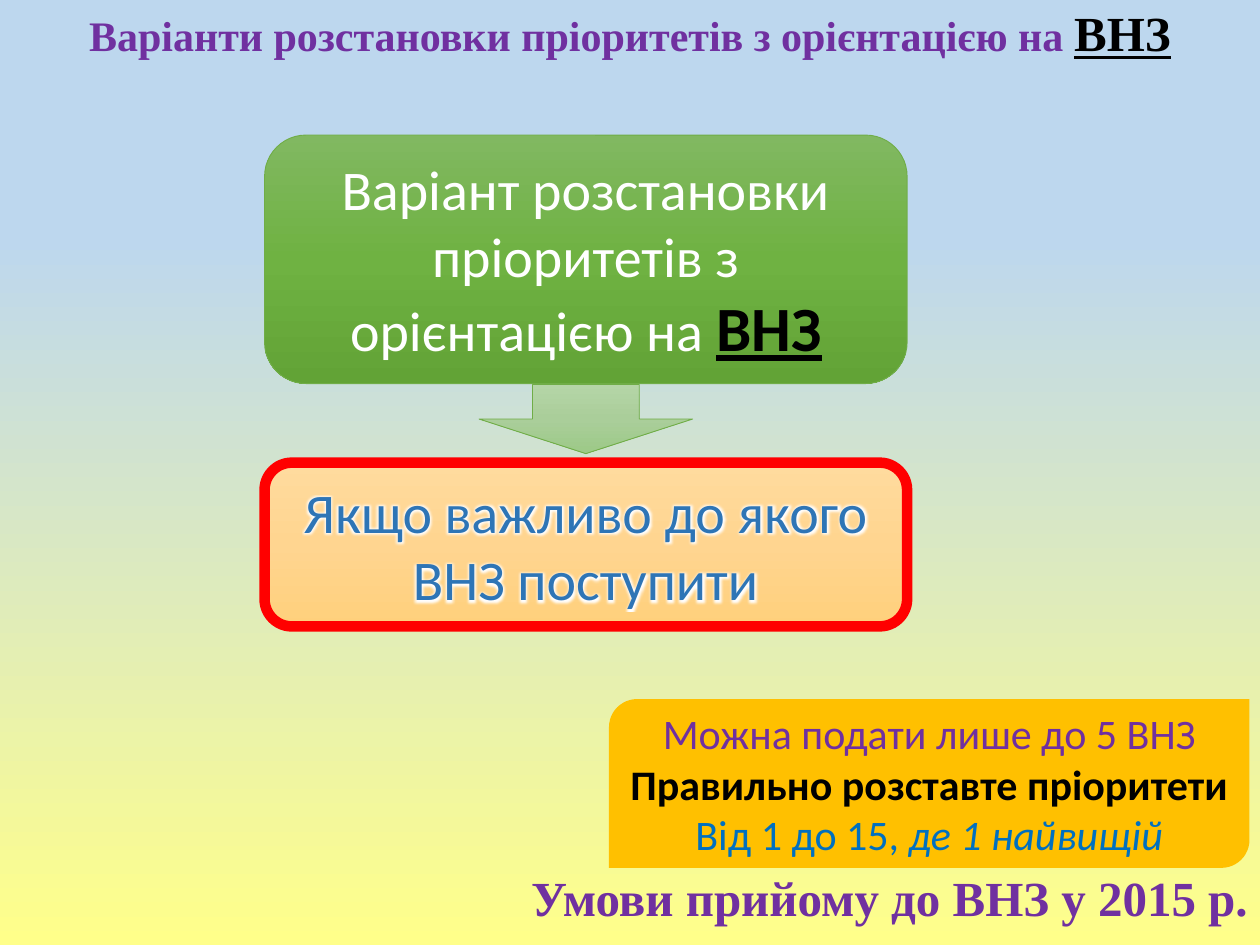
import pptx
import pptx.util
import pptx.dml.color
import pptx.enum.shapes
import pptx.enum.text
import pptx.oxml
import pptx.oxml.ns
import lxml.etree

Pt = pptx.util.Pt
SHAPES = pptx.enum.shapes.MSO_SHAPE
ALIGN = pptx.enum.text.PP_ALIGN
MIDDLE = pptx.enum.text.MSO_ANCHOR.MIDDLE
qn = pptx.oxml.ns.qn

PURPLE, BLACK, LEAF = "7030A0", "000000", "70AD47"


def rgb(value):
    return pptx.dml.color.RGBColor.from_string(value)


def paint_gradient(fill, stops):
    fill.gradient()
    fill.gradient_angle = 270
    stop_list = fill.gradient_stops[0]._gs.getparent()
    stop_list.clear()
    for position, color in stops:
        stop = lxml.etree.SubElement(stop_list, qn("a:gs"), pos=str(position * 1000))
        lxml.etree.SubElement(stop, qn("a:srgbClr"), val=color)


def paint_solid(fill, color):
    fill.solid()
    fill.fore_color.rgb = rgb(color)


def add_glow(run, color, radius):
    effects = lxml.etree.Element(qn("a:effectLst"))
    glow = lxml.etree.SubElement(effects, qn("a:glow"), rad=str(Pt(radius)))
    lxml.etree.SubElement(glow, qn("a:srgbClr"), val=color)
    run.font.fill._xPr.find(qn("a:solidFill")).addnext(effects)


def write(frame, paragraphs, align=ALIGN.CENTER, spacing=None, **base):
    frame.word_wrap = True
    frame.vertical_anchor = MIDDLE
    for index, runs in enumerate(paragraphs):
        paragraph = frame.paragraphs[0] if index == 0 else frame.add_paragraph()
        paragraph.alignment = align
        paragraph.line_spacing = spacing
        for text, changes in runs:
            run = paragraph.add_run()
            run.text = text
            style = {**base, **changes}
            run.font.color.rgb = rgb(style.pop("color"))
            style["size"] = Pt(style["size"])
            for key, value in style.items():
                setattr(run.font, key, value)


def add_block(slide, kind, box, line=None, width=0.5):
    block = slide.shapes.add_shape(kind, *map(Pt, box))
    block.shadow.inherit = False
    if line:
        block.line.color.rgb = rgb(line)
        block.line.width = Pt(width)
    else:
        block.line.fill.background()
    return block


def add_caption(slide, box, runs, align, **base):
    caption = slide.shapes.add_textbox(*map(Pt, box))
    write(caption.text_frame, [runs], align, 0.9,
          name="Times New Roman", bold=True, color=PURPLE, **base)


def add_reminder(slide, box):
    reminder = add_block(slide, SHAPES.ROUND_2_DIAG_RECTANGLE, box)
    paint_solid(reminder.fill, "FFC000")
    reminder.text_frame.margin_top = reminder.text_frame.margin_bottom = 0
    write(reminder.text_frame, [
        [("Можна подати лише до 5 ВНЗ", {"color": PURPLE})],
        [("Правильно розставте пріоритети", {"color": BLACK, "bold": True})],
        [("Від 1 до 15, ", {}), ("де 1 найвищій", {"italic": True})],
    ], name="Calibri", size=24, color="0070C0")


def add_priority_flow(slide, box):
    left, top, width, height = box
    option_height, arrow_top, arrow_height, arrow_width = 142, 142.5, 39.5, 122
    condition_height = 93.6

    option = add_block(slide, SHAPES.ROUNDED_RECTANGLE,
                       (left, top, width, option_height), LEAF)
    paint_gradient(option.fill, [(0, "81B861"), (50, "6FB242"), (100, "62A336")])
    write(option.text_frame, [[
        ("Варіант розстановки пріоритетів з орієнтацією на ", {}),
        ("ВНЗ", {"size": 36, "color": BLACK, "bold": True, "underline": True}),
    ]], name="Calibri", size=32, color="FFFFFF")

    condition = add_block(
        slide, SHAPES.ROUNDED_RECTANGLE,
        (left, top + height - condition_height, width, condition_height), "FF0000", 6)
    paint_gradient(condition.fill, [(0, "FFDB9E"), (50, "FFD590"), (100, "FFD07C")])
    write(condition.text_frame, [[("Якщо важливо до якого ВНЗ поступити", {})]],
          name="Calibri", size=32, color="2E75B6")
    add_glow(condition.text_frame.paragraphs[0].runs[0], "FFFFFF", 3)

    arrow = add_block(
        slide, SHAPES.DOWN_ARROW,
        (left + (width - arrow_width) / 2, top + arrow_top, arrow_width, arrow_height), LEAF)
    paint_gradient(arrow.fill, [(0, "B5D5A7"), (50, "AACE9A"), (100, "9CC987")])


def main():
    deck = pptx.Presentation()
    deck.slide_width, deck.slide_height = Pt(720), Pt(540)
    slide = deck.slides.add_slide(deck.slide_layouts[6])
    paint_gradient(slide.background.fill, [(0, "BDD7EE"), (25, "BDD7EE"), (100, "FFFF8A")])
    add_reminder(slide, (348, 399.5, 366, 96.5))
    add_priority_flow(slide, (151.2, 77.2, 367.2, 280.8))
    add_caption(slide, (72, 489, 648, 51),
                [("Умови прийому до ВНЗ у 2015 р.", {})], ALIGN.RIGHT, size=28)
    add_caption(slide, (0, -0.7, 720, 42.5), [
        ("Варіанти розстановки пріоритетів з орієнтацією на ", {}),
        ("ВНЗ", {"size": 28, "color": BLACK, "underline": True}),
    ], ALIGN.CENTER, size=24)
    deck.save("out.pptx")


if __name__ == "__main__":
    main()
